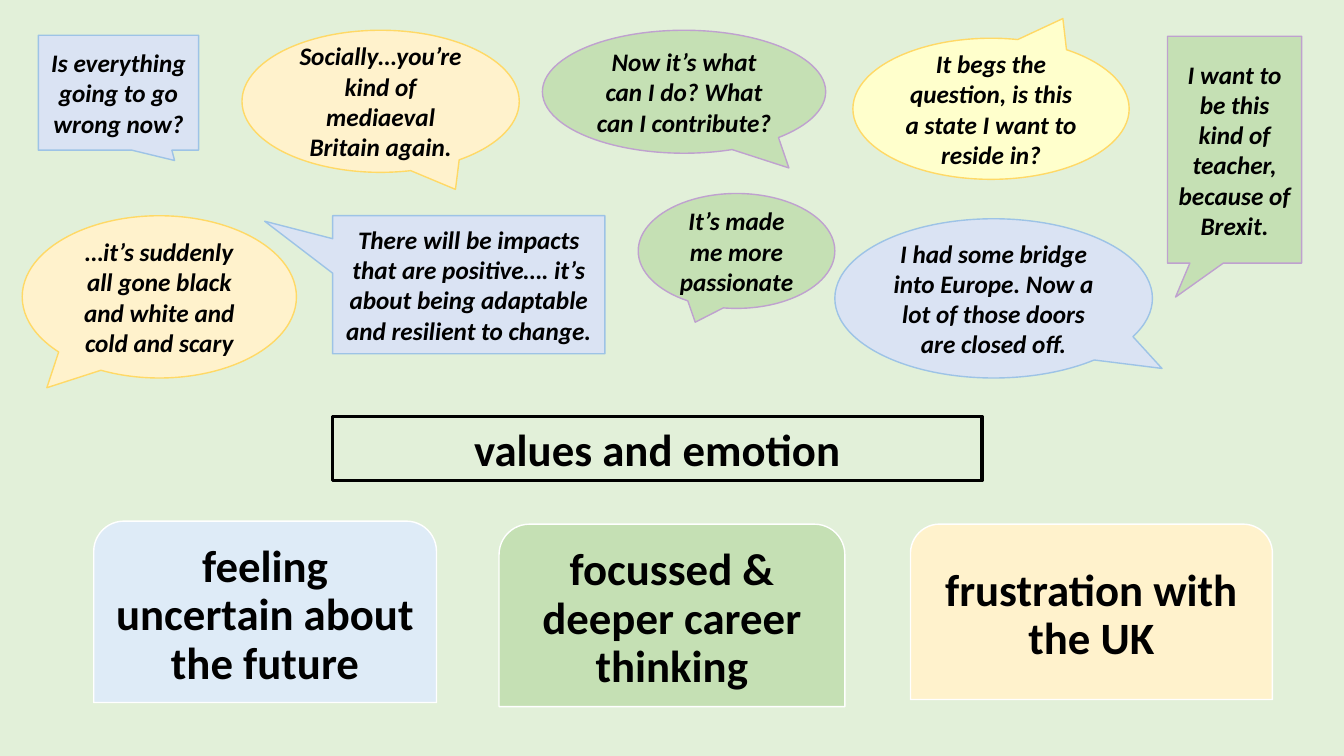
import pptx
import pptx.util
import pptx.dml.color
import pptx.enum.shapes
import pptx.enum.text

Inches = pptx.util.Inches
SHAPES = pptx.enum.shapes.MSO_SHAPE
OVAL = SHAPES.OVAL_CALLOUT
BOX = SHAPES.RECTANGULAR_CALLOUT

COLOURS = {
    "background": "E2F0D9",
    "text": "000000",
    "white": "FFFFFF",
    "blue": "DAE3F3",
    "blue_edge": "9DC3E6",
    "cream": "FFF2CC",
    "gold_edge": "FFD966",
    "yellow": "FFFFCC",
    "green": "C5E0B4",
    "purple_edge": "BFA1CF",
    "pale_blue": "DEEBF7",
}

QUOTE_FONT = {"name": "Calibri", "size": pptx.util.Pt(18), "bold": True, "italic": True}
HEADING_FONT = {"name": "Calibri", "size": pptx.util.Pt(32), "bold": True}
THEME_FRAME = {
    "margin_left": Inches(0.13),
    "margin_right": Inches(0.13),
    "margin_top": Inches(0.04),
    "margin_bottom": Inches(0.04),
}

QUOTES = [
    (BOX, (0.38, 0.35, 1.59, 1.14), (0.35, 0.59), "blue", "blue_edge",
     "Is everything going to go wrong now?"),
    (OVAL, (2.4, 0.3, 2.75, 1.41), (0.27, 0.62), "cream", "gold_edge",
     "Socially…you’re kind of mediaeval Britain again."),
    (OVAL, (6.33, 1.92, 1.95, 1.14), (-0.21, 0.62), "green", "purple_edge",
     "It’s made me more passionate"),
    (OVAL, (0.22, 2.14, 2.72, 1.61), (-0.41, 0.56), "cream", "gold_edge",
     "…it’s suddenly all gone black and white and cold and scary"),
    (BOX, (11.58, 0.36, 1.33, 2.25), (-0.44, 0.65), "green", "purple_edge",
     "I want to be this kind of teacher, because of Brexit."),
    (OVAL, (8.28, 2.17, 3.15, 1.58), (0.53, 0.44), "blue", "blue_edge",
     "I had some bridge into Europe. Now a lot of those doors are closed off."),
    (OVAL, (8.46, 0.38, 2.74, 1.4), (0.26, -0.64), "yellow", "gold_edge",
     "It begs the question, is this a state I want to reside in?"),
    (OVAL, (5.38, 0.3, 2.81, 1.22), (0.37, 0.62), "green", "purple_edge",
     "Now it’s what can I do? What can I contribute?"),
    (BOX, (3.3, 2.14, 2.7, 1.37), (-0.75, -0.46), "blue", "blue_edge",
     "There will be impacts that are positive…. it’s about being adaptable "
     "and resilient to change."),
]

THEMES = [
    ((0.93, 5.17, 3.4, 1.8), "pale_blue", "feeling uncertain about the future"),
    ((4.95, 5.2, 3.43, 1.81), "green", "focussed & deeper career thinking"),
    ((9.03, 5.2, 3.59, 1.74), "cream", "frustration with the UK"),
]


def colour(name):
    return pptx.dml.color.RGBColor.from_string(COLOURS[name])


def apply_format(target, values):
    for attribute, value in values.items():
        setattr(target, attribute, value)


def add_panel(slide, kind, place, fill, edge, edge_width, words, font):
    panel = slide.shapes.add_shape(kind, *map(Inches, place))
    panel.shadow.inherit = False
    if fill:
        panel.fill.solid()
        panel.fill.fore_color.rgb = colour(fill)
    else:
        panel.fill.background()
    panel.line.color.rgb = colour(edge)
    panel.line.width = pptx.util.Pt(edge_width)
    frame = panel.text_frame
    apply_format(frame, {
        "word_wrap": True,
        "vertical_anchor": pptx.enum.text.MSO_ANCHOR.MIDDLE,
    })
    paragraph = frame.paragraphs[0]
    paragraph.alignment = pptx.enum.text.PP_ALIGN.CENTER
    run = paragraph.add_run()
    run.text = words
    apply_format(run.font, font)
    run.font.color.rgb = colour("text")
    return panel


def add_quote(slide, kind, place, tail, fill, edge, words):
    bubble = add_panel(slide, kind, place, fill, edge, 1, words, QUOTE_FONT)
    for index, offset in enumerate(tail):
        bubble.adjustments[index] = offset


def add_theme(slide, place, fill, words):
    card = add_panel(slide, SHAPES.ROUND_2_SAME_RECTANGLE, place, fill, "white", 1,
                     words, HEADING_FONT)
    apply_format(card.text_frame, THEME_FRAME)
    card.text_frame.paragraphs[0].line_spacing = 0.9


def main():
    deck = pptx.Presentation()
    apply_format(deck, {"slide_width": Inches(13.33), "slide_height": Inches(7.5)})
    slide = deck.slides.add_slide(deck.slide_layouts[6])
    slide.background.fill.solid()
    slide.background.fill.fore_color.rgb = colour("background")
    for quote in QUOTES:
        add_quote(slide, *quote)
    for theme in THEMES:
        add_theme(slide, *theme)
    add_panel(slide, SHAPES.RECTANGLE, (3.3, 4.13, 6.44, 0.64), None, "text", 2.25,
              "values and emotion", HEADING_FONT)
    deck.save("out.pptx")


if __name__ == "__main__":
    main()
